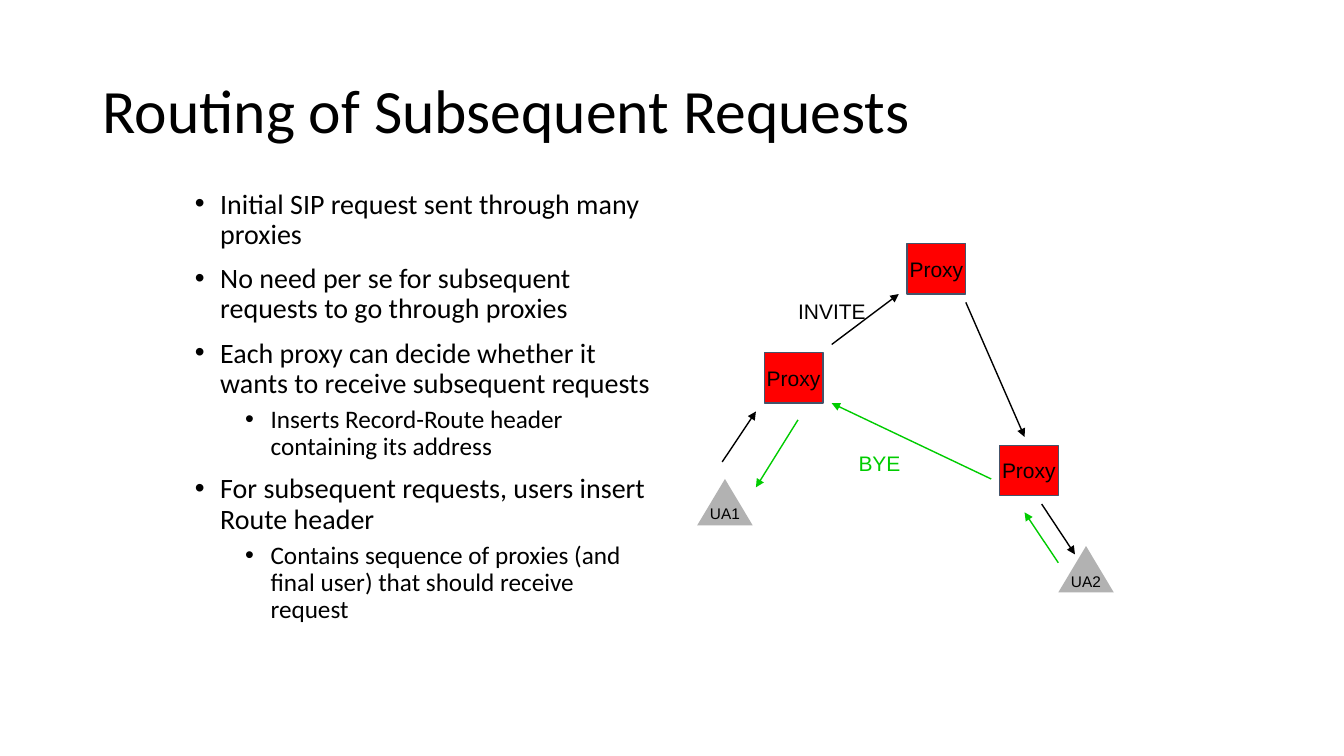
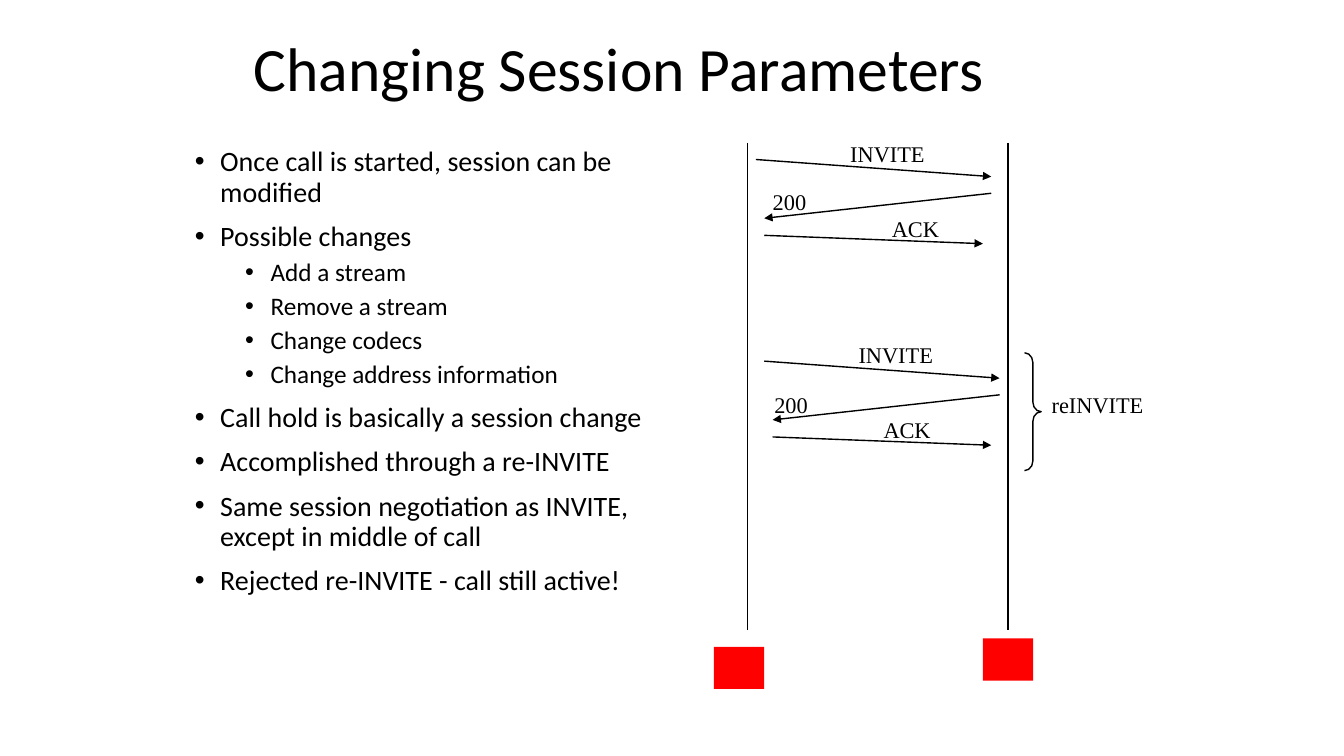
import pptx
import pptx.dml.color
import pptx.enum.shapes
import pptx.enum.text
import pptx.oxml
import pptx.oxml.ns
import pptx.util

Cm, Pt = pptx.util.Cm, pptx.util.Pt
SHAPE = pptx.enum.shapes.MSO_SHAPE
ALIGN = pptx.enum.text.PP_ALIGN
ANCHOR = pptx.enum.text.MSO_ANCHOR
FIT = pptx.enum.text.MSO_AUTO_SIZE

BLACK, RED, GREEN = "000000", "FF0000", "00CC00"
GREY, SLATE = "B2B2B2", "44546A"


def rgb(value):
    return pptx.dml.color.RGBColor.from_string(value)


def xml(tag, attributes=""):
    return pptx.oxml.parse_xml(
        f"<a:{tag} {pptx.oxml.ns.nsdecls('a')} {attributes}/>")


def write(p, text, *, font, size, color=BLACK, align=ALIGN.CENTER,
          before=0, spacing=1.0):
    p.alignment = align
    p.line_spacing = spacing
    p.space_before = Pt(before)
    r = p.add_run()
    r.text = text
    r.font.name = font
    r.font.size = Pt(size)
    r.font.color.rgb = rgb(color)


class Deck:
    """Holds the shared style and the slide being built; lengths are in cm."""

    body_font = "Calibri"
    title_size = 44
    line_width = 1
    # Text size and space before, by bullet level
    levels = ((20, 10), (18, 5))
    bullet_indent, level_step = 0.64, 1.27

    def __init__(self):
        self.prs = pptx.Presentation()
        self.prs.slide_width = Cm(33.87)
        self.prs.slide_height = Cm(19.05)
        self.s = None

    def slide(self, title, x, y, w, h):
        self.s = self.prs.slides.add_slide(self.prs.slide_layouts[5])
        sp = self.s.shapes.title
        sp.left, sp.top, sp.width, sp.height = Cm(x), Cm(y), Cm(w), Cm(h)
        tf = sp.text_frame
        tf.auto_size = FIT.NONE
        tf.vertical_anchor = ANCHOR.MIDDLE
        write(tf.paragraphs[0], title, font=self.body_font,
              size=self.title_size, align=ALIGN.LEFT, spacing=0.9)

    def bullets(self, items, x, y, w, h):
        tf = self.s.shapes.add_textbox(Cm(x), Cm(y), Cm(w), Cm(h)).text_frame
        tf.word_wrap = True
        for i, (level, text) in enumerate(items):
            p = tf.add_paragraph() if i else tf.paragraphs[0]
            p.level = level
            size, before = self.levels[level]
            write(p, text, font=self.body_font, size=size, align=ALIGN.LEFT,
                  before=before, spacing=0.9)
            pPr = p._p.get_or_add_pPr()
            margin = self.bullet_indent + level * self.level_step
            pPr.set("marL", str(Cm(margin)))
            pPr.set("indent", str(-Cm(self.bullet_indent)))
            pPr.append(xml("buFont", 'typeface="Arial"'))
            pPr.append(xml("buChar", 'char="•"'))

    def label(self, text, x, y, w, h, **style):
        sp = self.s.shapes.add_textbox(Cm(x), Cm(y), Cm(w), Cm(h))
        tf = sp.text_frame
        tf.word_wrap = False
        tf.auto_size = FIT.SHAPE_TO_FIT_TEXT
        tf.vertical_anchor = ANCHOR.MIDDLE
        write(tf.paragraphs[0], text, **style)

    def shape(self, kind, x, y, w, h, fill=None, line=None, text="", **style):
        sp = self.s.shapes.add_shape(kind, Cm(x), Cm(y), Cm(w), Cm(h))
        sp.shadow.inherit = False
        if fill:
            sp.fill.solid()
            sp.fill.fore_color.rgb = rgb(fill)
        else:
            sp.fill.background()
        if line:
            sp.line.color.rgb = rgb(line)
            sp.line.width = Pt(self.line_width)
        else:
            sp.line.fill.background()
        if text:
            tf = sp.text_frame
            tf.word_wrap = False
            tf.vertical_anchor = ANCHOR.MIDDLE
            write(tf.paragraphs[0], text, **style)
        return sp

    def line(self, x1, y1, x2, y2, color=BLACK, arrow=True):
        sp = self.s.shapes.add_connector(
            pptx.enum.shapes.MSO_CONNECTOR.STRAIGHT,
            Cm(x1), Cm(y1), Cm(x2), Cm(y2))
        sp.line.color.rgb = rgb(color)
        sp.line.width = Pt(self.line_width)
        if arrow:
            sp.line._get_or_add_ln().append(xml("tailEnd", 'type="triangle"'))
        sp._element.spPr.append(xml("effectLst"))


def routing_slide(deck):
    deck.slide("Routing of Subsequent Requests", 2.33, 1.01, 29.21, 3.68)
    deck.bullets([
        (0, "Initial SIP request sent through many proxies"),
        (0, "No need per se for subsequent requests to go through proxies"),
        (0, "Each proxy can decide whether it wants to receive subsequent "
            "requests"),
        (1, "Inserts Record-Route header containing its address"),
        (0, "For subsequent requests, users insert Route header"),
        (1, "Contains sequence of proxies (and final user) that should "
            "receive request"),
    ], 4.66, 4.66, 12.09, 11.43)

    # Proxies and user agents
    for x, y in ((19.26, 8.89), (22.86, 6.14), (25.19, 11.22)):
        deck.shape(SHAPE.RECTANGLE, x, y, 1.48, 1.27, RED, SLATE,
                   "Proxy", font="Arial", size=15)
    for name, x, y in (("UA1", 17.57, 12.07), ("UA2", 26.67, 13.76)):
        deck.shape(SHAPE.ISOSCELES_TRIANGLE, x, y, 1.4, 1.17, GREY,
                   text=name, font="Arial", size=11)

    # Path of each request, hop by hop
    paths = {
        BLACK: ((18.2, 11.64, 19.05, 10.37), (20.96, 8.68, 22.65, 7.41),
                (24.34, 7.62, 25.82, 11.01), (26.25, 12.7, 27.09, 13.97)),
        GREEN: ((26.67, 14.18, 25.82, 12.91), (24.98, 12.07, 20.96, 10.16),
                (20.11, 10.58, 19.05, 12.28)),
    }
    for color, hops in paths.items():
        for hop in hops:
            deck.line(*hop, color=color)
    deck.label("INVITE", 19.86, 7.39, 2.21, 0.89, font="Arial", size=15)
    deck.label("BYE", 21.38, 11.22, 1.57, 0.89, font="Arial", size=15,
               color=GREEN)


def session_slide(deck):
    deck.slide("Changing Session Parameters", 6.14, 0.21, 21.59, 3.18)
    deck.bullets([
        (0, "Once call is started, session can be modified"),
        (0, "Possible changes"),
        (1, "Add a stream"),
        (1, "Remove a stream"),
        (1, "Change codecs"),
        (1, "Change address information"),
        (0, "Call hold is basically a session change"),
        (0, "Accomplished through a re-INVITE"),
        (0, "Same session negotiation as INVITE, except in middle of call"),
        (0, "Rejected re-INVITE - call still active!"),
    ], 4.66, 3.6, 12.7, 12.57)

    # Lifelines and the two parties
    for x in (18.84, 25.4):
        deck.line(x, 3.6, x, 15.88, arrow=False)
    for x, y in ((17.99, 16.3), (24.77, 16.09)):
        deck.shape(SHAPE.RECTANGLE, x, y, 1.27, 1.06, RED)

    # The same three messages, first for the call and then for its change
    messages = ((19.05, 4.02, 24.98, 4.45), (24.98, 4.87, 19.26, 5.5),
                (19.26, 5.93, 24.77, 6.14))
    names = (("INVITE", 2.39), ("200", 1.35), ("ACK", 1.7))
    exchanges = (
        (0, 0, ((21.17, 3.39), (19.22, 4.62), (22.22, 5.29))),
        (0.21, 5.08, ((21.38, 8.47), (19.26, 9.73), (22.01, 10.35))),
    )
    style = {"font": "Times New Roman", "size": 16}
    for dx, dy, places in exchanges:
        for (x1, y1, x2, y2), (name, w), (x, y) in zip(messages, names, places):
            deck.line(x1 + dx, y1 + dy, x2 + dx, y2 + dy)
            deck.label(name, x, y, w, 0.94, **style)

    # Brace around the second exchange
    brace = deck.shape(SHAPE.RIGHT_BRACE, 25.82, 8.89, 0.42, 2.97, line=BLACK)
    brace.adjustments[0] = 0.58
    deck.label("reINVITE", 26.25, 9.73, 2.82, 0.94, **style)


def main():
    deck = Deck()
    routing_slide(deck)
    session_slide(deck)
    deck.prs.save("out.pptx")


if __name__ == "__main__":
    main()
